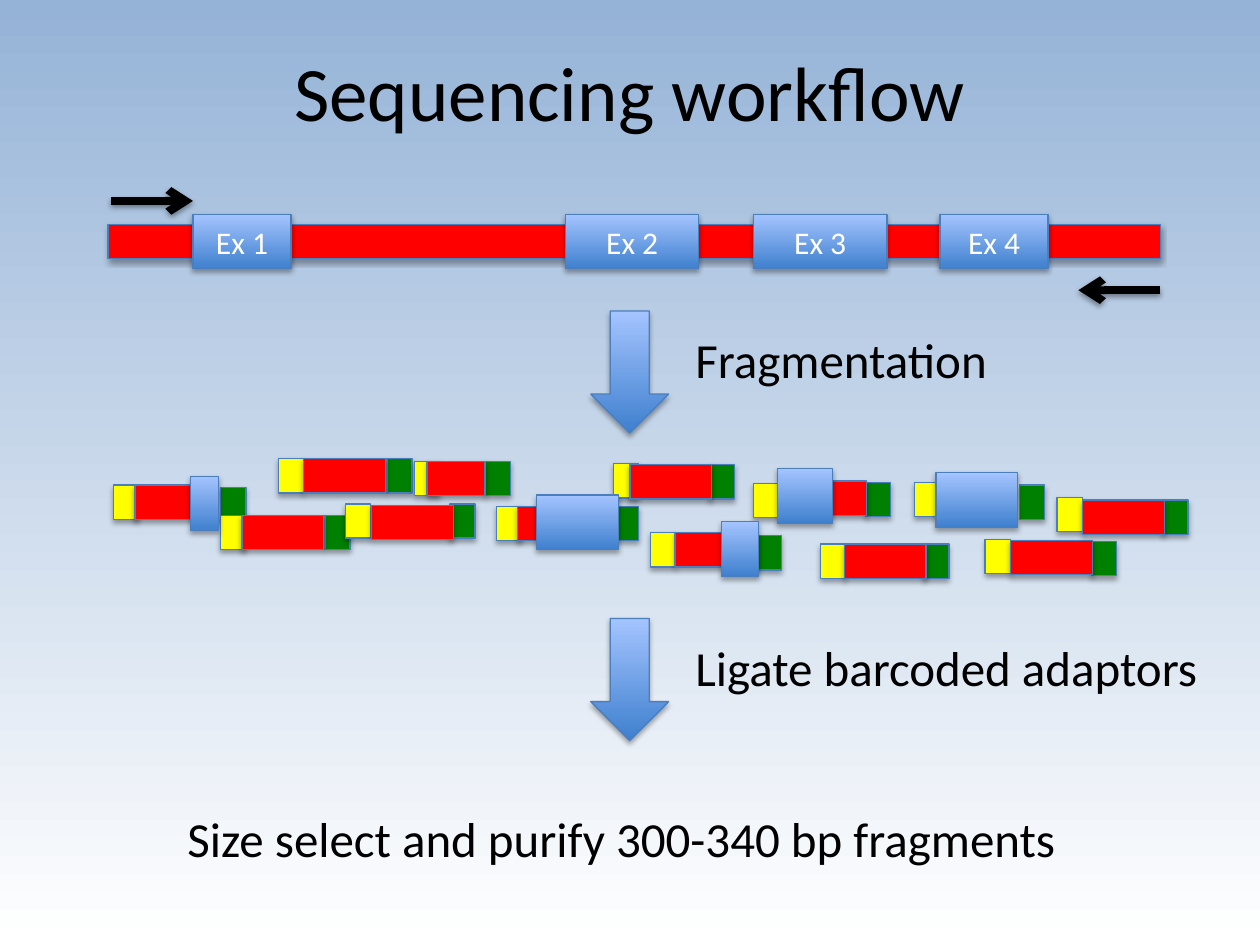
from lxml.etree import SubElement
from pptx import Presentation
from pptx.dml.color import RGBColor
from pptx.enum.shapes import MSO_CONNECTOR, MSO_SHAPE
from pptx.enum.text import MSO_ANCHOR, MSO_AUTO_SIZE, PP_ALIGN
from pptx.oxml.ns import qn
from pptx.util import Cm, Pt

RED, GREEN, YELLOW = "FF0000", "008000", "FFFF00"
BLUES = ("3F80CE", "A4C4FF")
EDGE = "4B7EBC"
BAR, EXON, TAG, PIECE = 0.69, 1.1, 0.51, 1.65  # heights, then widths, in cm

EXONS = [("Ex 1", 3.89, 1.98), ("Ex 2", 11.4, 2.69),
         ("Ex 3", 15.19, 2.69), ("Ex 4", 18.95, 2.18)]

# Left tag (x, y), right tag (x, y), insert (x, y, width), exon (x, y, width)
FRAGMENTS = [
    ((2.29, 9.78), (4.45, 9.83), (2.72, 9.78, PIECE), (3.84, 9.6, 0.56)),
    ((4.45, 10.39), (6.55, 10.39), (4.88, 10.39, PIECE), None),
    ((5.61, 9.25), (7.8, 9.25), (6.12, 9.25, PIECE), None),
    ((6.96, 10.16), (9.07, 10.16), (7.49, 10.19, PIECE), None),
    ((8.36, 9.3), (9.78, 9.3), (8.61, 9.3, 1.17), None),
    ((10.01, 10.21), (12.37, 10.21), (10.44, 10.21, PIECE), (10.82, 9.98, PIECE)),
    ((12.37, 9.35), (14.3, 9.37), (12.7, 9.37, PIECE), None),
    ((13.11, 10.74), (15.24, 10.8), (13.61, 10.74, PIECE), (14.55, 10.52, 0.74)),
    ((15.19, 9.75), (17.45, 9.73), (15.82, 9.7, PIECE), (15.67, 9.45, 1.12)),
    ((16.54, 10.97), (18.62, 10.97), (17.02, 10.97, PIECE), None),
    ((18.44, 9.73), (20.55, 9.78), None, (18.87, 9.53, PIECE)),
    ((19.86, 10.87), (22, 10.92), (20.37, 10.9, PIECE), None),
    ((21.31, 10.03), (23.44, 10.08), (21.82, 10.08, PIECE), None),
]


def tint(color, code):
    color.rgb = RGBColor.from_string(code)


def blend(fill, codes, angle):
    """Two-stop gradient; the angle runs counter-clockwise."""
    fill.gradient()
    fill.gradient_angle = angle
    for stop, code in zip(fill.gradient_stops, codes):
        tint(stop.color, code)


def shade(item, alpha, dist):
    """Soft black shadow straight below; alpha in percent."""
    effects = SubElement(item._element.spPr, qn("a:effectLst"))
    drop = SubElement(effects, qn("a:outerShdw"), blurRad=str(Pt(3.1)),
                      dist=str(Pt(dist)), dir="5400000", rotWithShape="0")
    black = SubElement(drop, qn("a:srgbClr"), val="000000")
    SubElement(black, qn("a:alpha"), val=str(alpha * 1000))


def write(frame, text, size, code, align):
    para = frame.paragraphs[0]
    para.alignment = align
    run = para.add_run()
    run.text = text
    run.font.size = Pt(size)
    run.font.name = "Calibri"
    tint(run.font.color, code)


def block(shapes, x, y, w, h, fill, kind=MSO_SHAPE.RECTANGLE):
    """Outlined shape; fill is one hex colour or a gradient pair."""
    shape = shapes.add_shape(kind, Cm(x), Cm(y), Cm(w), Cm(h))
    if isinstance(fill, tuple):
        blend(shape.fill, fill, 90)
    else:
        shape.fill.solid()
        tint(shape.fill.fore_color, fill)
    tint(shape.line.color, EDGE)
    shape.line.width = Pt(0.75)
    shade(shape, 35, 1.8)
    return shape


def exon(shapes, name, x, w):
    frame = block(shapes, x, 4.32, w, EXON, BLUES).text_frame
    frame.vertical_anchor = MSO_ANCHOR.MIDDLE
    write(frame, name, 18, "FFFFFF", PP_ALIGN.CENTER)


def primer(shapes, start, end, y):
    line = shapes.add_connector(MSO_CONNECTOR.STRAIGHT,
                                Cm(start), Cm(y), Cm(end), Cm(y))
    tint(line.line.color, "000000")
    line.line.width = Pt(4.5)
    SubElement(line.line._get_or_add_ln(), qn("a:tailEnd"), type="arrow")
    shade(line, 38, 1.6)


def label(shapes, text, x, y, w):
    frame = shapes.add_textbox(Cm(x), Cm(y), Cm(w), Cm(1.45)).text_frame
    frame.word_wrap = False
    frame.auto_size = MSO_AUTO_SIZE.SHAPE_TO_FIT_TEXT
    write(frame, text, 28, "000000", PP_ALIGN.LEFT)


def step(shapes, text, y):
    block(shapes, 11.91, y, 1.57, 2.46, BLUES, MSO_SHAPE.DOWN_ARROW)
    label(shapes, text, 13.77, y + 0.25, 6.45 if y < 10 else 10.74)


def library(shapes):
    """Tagged fragments: tags at the back, then inserts, then exons."""
    lefts, rights, inserts, exons = zip(*FRAGMENTS)
    tags = shapes.add_group_shape().shapes
    for spots, code in ((rights, GREEN), (lefts, YELLOW)):
        for x, y in spots:
            block(tags, x, y, TAG, BAR, code)
    cores = shapes.add_group_shape().shapes
    for parts, height, fill in ((inserts, BAR, RED), (exons, EXON, BLUES)):
        for x, y, w in filter(None, parts):
            block(cores, x, y, w, height, fill)


def heading(title, text):
    title.left, title.top = Cm(1.27), Cm(0.23)
    title.width, title.height = Cm(22.86), Cm(3.18)
    title.text_frame.vertical_anchor = MSO_ANCHOR.MIDDLE
    write(title.text_frame, text, 44, "000000", PP_ALIGN.CENTER)


def main():
    deck = Presentation()
    deck.slide_width, deck.slide_height = Cm(25.4), Cm(19.05)
    slide = deck.slides.add_slide(deck.slide_layouts[5])
    blend(slide.background.fill, ("95B3D7", "FFFFFF"), 270)
    shapes = slide.shapes
    heading(shapes.title, "Sequencing workflow")
    block(shapes, 2.18, 4.52, 21.21, BAR, RED)
    for name, x, w in EXONS:
        exon(shapes, name, x, w)
    primer(shapes, 2.24, 3.89, 4.05)
    primer(shapes, 23.39, 21.74, 5.85)
    step(shapes, "Fragmentation", 6.27)
    step(shapes, "Ligate barcoded adaptors", 12.47)
    library(shapes)
    label(shapes, "Size select and purify 300-340 bp fragments", 3.53, 16.18, 18.19)
    deck.save("out.pptx")


if __name__ == "__main__":
    main()
